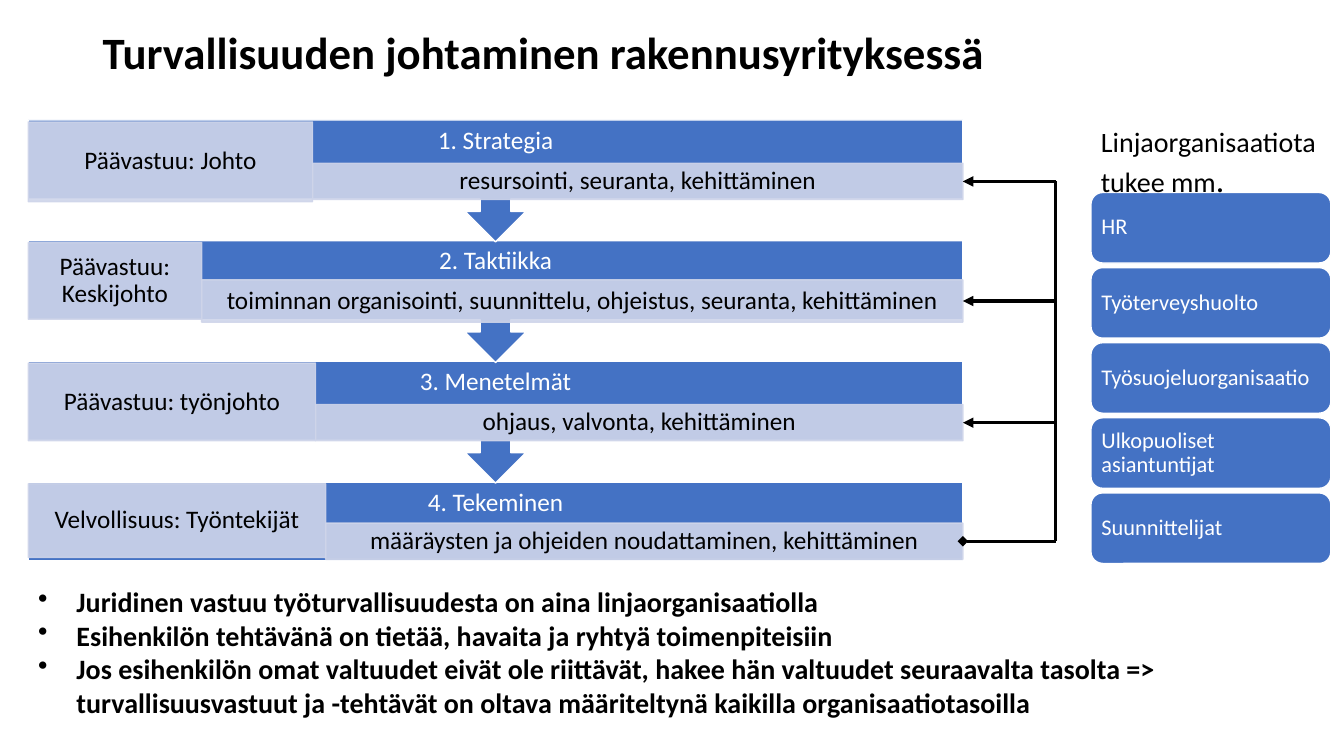
"""Build a slide on safety management in a construction company."""
from lxml import etree
from pptx import Presentation, util as u
from pptx.dml.color import RGBColor
from pptx.enum import shapes, text
from pptx.oxml.ns import qn

COLORS = {"blue": "4472C4", "pale": "CFD5EA", "white": "FFFFFF", "black": "000000"}
KIND = shapes.MSO_SHAPE

deck = Presentation()
deck.slide_width, deck.slide_height = u.Inches(13.33), u.Inches(7.5)
page = deck.slides.add_slide(deck.slide_layouts[6])


def add_box(kind, area, fill=None, opacity=100):
    area = [u.Inches(length) for length in area]
    if fill is None:
        return page.shapes.add_textbox(*area)
    box = page.shapes.add_shape(kind, *area)
    box.shadow.inherit = False
    box.fill.solid()
    box.fill.fore_color.rgb = RGBColor.from_string(COLORS[fill])
    edge = "white" if fill == "blue" else fill
    box.line.color.rgb = RGBColor.from_string(COLORS[edge])
    box.line.width = u.Pt(1)
    if opacity < 100:
        for color in box._element.spPr.iter(qn("a:srgbClr")):
            etree.SubElement(color, qn("a:alpha"), val=str(opacity * 1000))
    return box


def write(box, lines, size, color="black", bold=False, align="LEFT", anchor="MIDDLE",
          insets=(0.1, 0.05), spacing=0.9):
    frame = box.text_frame
    frame.word_wrap = True
    frame.vertical_anchor = getattr(text.MSO_ANCHOR, anchor)
    frame.margin_left = frame.margin_right = u.Inches(insets[0])
    frame.margin_top = frame.margin_bottom = u.Inches(insets[1])
    frame.text = "\n".join(lines)
    for para in frame.paragraphs:
        para.alignment = getattr(text.PP_ALIGN, align)
        para.line_spacing = spacing
        para.font.name, para.font.size, para.font.bold = "Calibri", u.Pt(size), bold
        para.font.color.rgb = RGBColor.from_string(COLORS[color])
    return frame


title = add_box(None, (0.92, 0, 11.5, 1.09))
write(title, ["Turvallisuuden johtaminen rakennusyrityksessä"], 32, bold=True)

left, top, width = 0.28, 1.19, 9.27
right = left + width
level_pitch = (4.78 - top) / 3
levels = [
    ("1. Strategia", "Päävastuu: Johto", 2.82, 0.79,
     "resursointi, seuranta, kehittäminen", 0.43, 0.36),
    ("2. Taktiikka", "Päävastuu: Keskijohto", 1.72, 0.76,
     "toiminnan organisointi, suunnittelu, ohjeistus, seuranta, kehittäminen", 0.39, 0.42),
    ("3. Menetelmät", "Päävastuu: työnjohto", 2.85, 0.77,
     "ohjaus, valvonta, kehittäminen", 0.43, 0.36),
    ("4. Tekeminen", "Velvollisuus: Työntekijät", 2.95, 0.73,
     "määräysten ja ohjeiden noudattaminen, kehittäminen", 0.41, 0.36),
]
task_boxes = []
for index, level in reversed(list(enumerate(levels))):
    heading, owner, owner_width, owner_height, tasks, task_drop, task_height = level
    level_top = top + index * level_pitch
    is_last = index == len(levels) - 1
    kind, height = (KIND.RECTANGLE, 0.78) if is_last else (KIND.DOWN_ARROW_CALLOUT, 1.21)
    add_box(kind, (left, level_top, width, height), "blue")
    heading_box = add_box(None, (left, level_top, width, 0.42))
    write(heading_box, [heading], 18, "white", align="CENTER", insets=(0.14, 0.03))
    owner_area = (left, level_top + 0.02, owner_width, owner_height)
    task_area = (left + owner_width, level_top + task_drop, width - owner_width, task_height)
    for label, area in ((owner, owner_area), (tasks, task_area)):
        box = add_box(KIND.RECTANGLE, area, "pale", 90)
        write(box, [label], 18, align="CENTER", insets=(0.14, 0.03))
    task_boxes.insert(0, box)

trunk = u.Inches(10.47)
middles = [box.top + box.height // 2 for box in task_boxes]
links = [(middle, u.Inches(right), middle, box, "triangle")
         for middle, box in zip(middles, task_boxes)]
links[-1] = links[-1][:4] + ("diamond",)
links.append((middles[0], trunk, middles[-1], None, None))
for start, end_x, end_y, target, head in links:
    link = page.shapes.add_connector(shapes.MSO_CONNECTOR.STRAIGHT, trunk, start, end_x, end_y)
    link.line.color.rgb = RGBColor.from_string(COLORS["black"])
    link.line.width = u.Pt(2.5)
    if target is not None:
        link.end_connect(target, 3)
        etree.SubElement(link.line._get_or_add_ln(), qn("a:tailEnd"), type=head)
    etree.SubElement(link._element.spPr, qn("a:effectLst"))

support_left, support_width = 10.82, 2.38
supporters = ["HR", "Työterveyshuolto", "Työsuojeluorganisaatio",
              "Ulkopuoliset asiantuntijat", "Suunnittelijat"]
for index, supporter in enumerate(supporters):
    support_top = 1.91 + index * (4.89 - 1.91) / 4
    box = add_box(KIND.ROUNDED_RECTANGLE, (support_left, support_top, support_width, 0.7), "blue")
    write(box, [supporter], 16, "white", insets=(0.07, 0.07))

support_title = add_box(None, (support_left, top, support_width, 0.84))
frame = write(support_title, ["Linjaorganisaatiota tukee mm"], 20, anchor="TOP", spacing=1.0)
span = frame.paragraphs[0].add_run()
span.text = "."
span.font.size = u.Pt(24)

summary = add_box(None, (left, 5.75, 12.92, 1.85))
frame = write(summary, [
    "Juridinen vastuu työturvallisuudesta on aina linjaorganisaatiolla",
    "Esihenkilön tehtävänä on tietää, havaita ja ryhtyä toimenpiteisiin",
    "Jos esihenkilön omat valtuudet eivät ole riittävät, hakee hän valtuudet seuraavalta "
    "tasolta => turvallisuusvastuut ja -tehtävät on oltava määriteltynä kaikilla "
    "organisaatiotasoilla",
], 20, bold=True, anchor="TOP", spacing=1.0)
for para in frame.paragraphs:
    properties = para._p.get_or_add_pPr()
    properties.set("marL", str(u.Inches(0.38)))
    properties.set("indent", str(-u.Inches(0.38)))
    bullet = etree.Element(qn("a:buChar"), char="•")
    properties.find(qn("a:defRPr")).addprevious(bullet)

deck.save("out.pptx")
